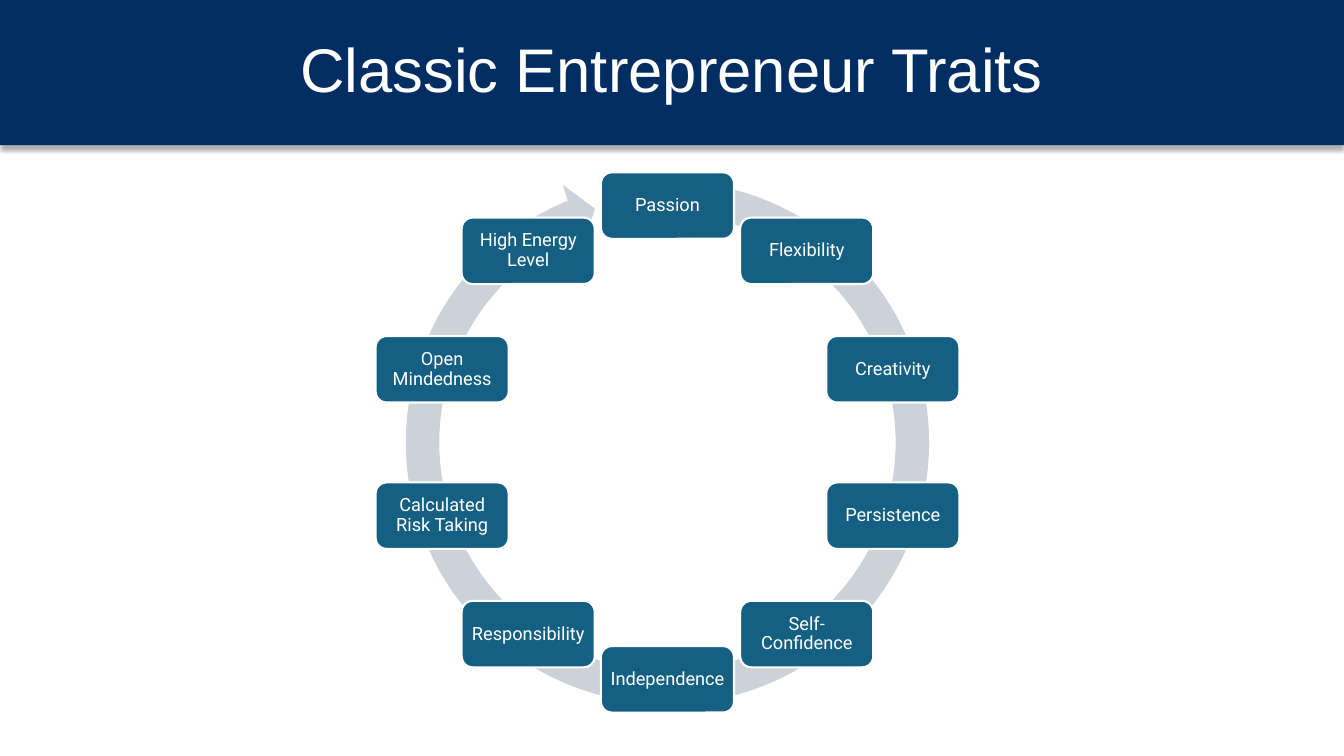
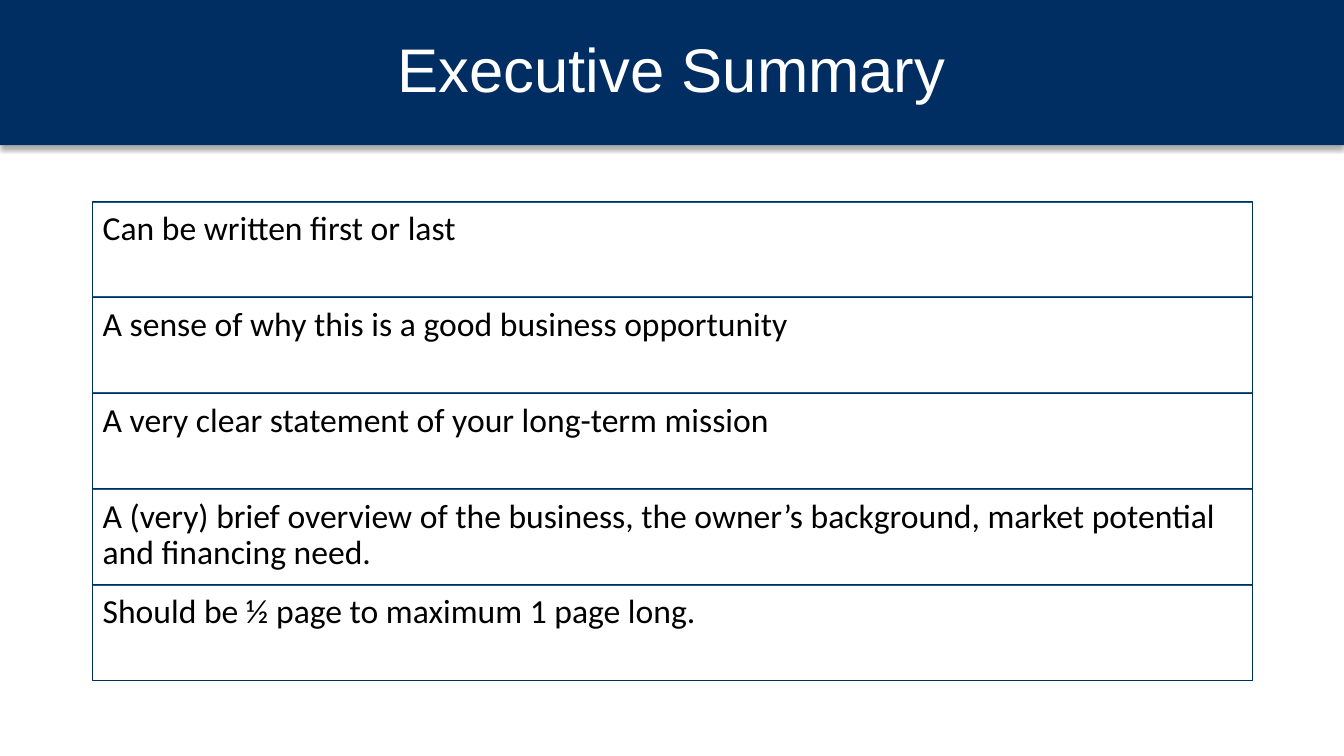
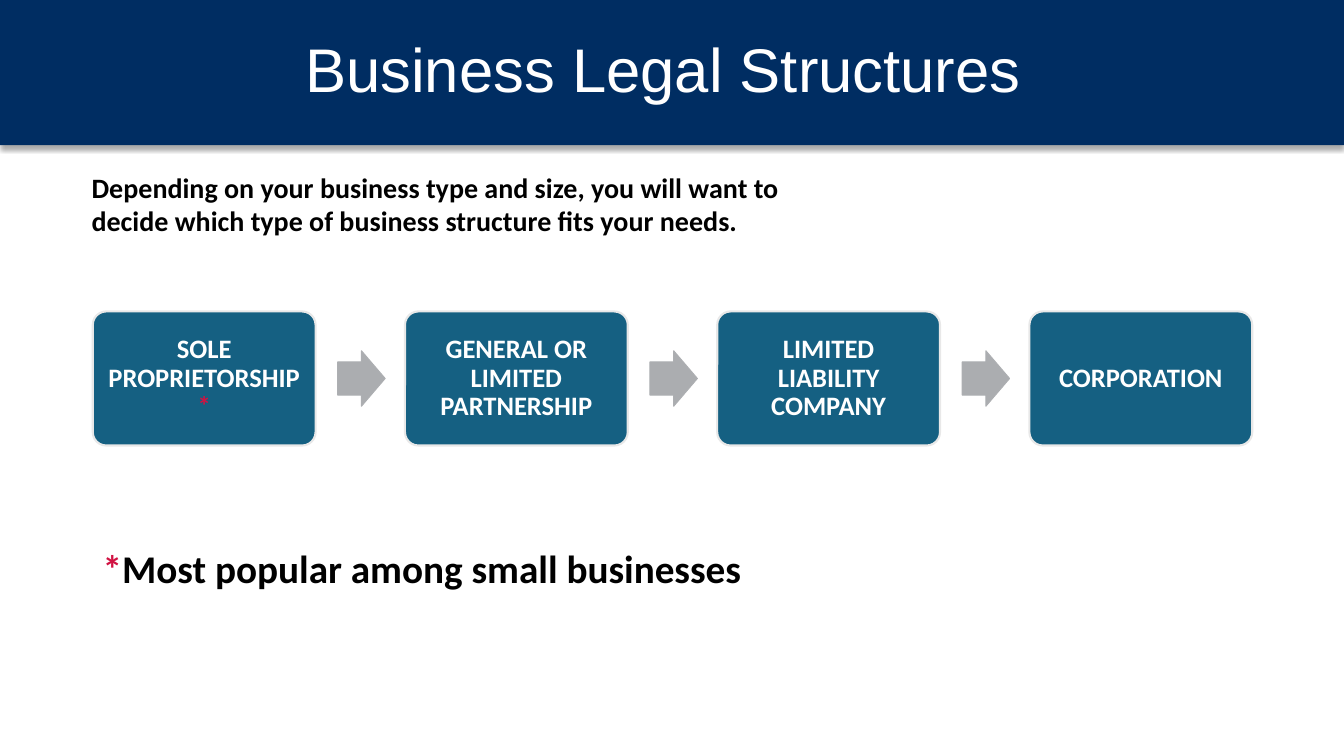
from math import cos, radians, sin

from lxml import etree
from pptx import Presentation
from pptx.dml.color import RGBColor
from pptx.enum.shapes import MSO_CONNECTOR, MSO_SHAPE as Preset
from pptx.enum.text import MSO_ANCHOR as Anchor, PP_ALIGN as Align
from pptx.oxml import parse_xml
from pptx.oxml.ns import nsdecls, qn
from pptx.util import Inches, Pt

NAVY = RGBColor(0x00, 0x2D, 0x62)
TEAL = RGBColor(0x15, 0x60, 0x82)
RING_GRAY = RGBColor(0xCC, 0xD2, 0xD8)
ARROW_GRAY = RGBColor(0xAB, 0xAD, 0xB0)
ARROW_EDGE = RGBColor(0xAD, 0xAF, 0xB2)
PALE_GRAY = RGBColor(0xE8, 0xE8, 0xE8)
RED = RGBColor(0xD1, 0x12, 0x42)
WHITE = RGBColor(0xFF, 0xFF, 0xFF)
BLACK = RGBColor(0x00, 0x00, 0x00)

SLIDE_WIDTH, SLIDE_HEIGHT = 13.33, 7.5
BAND_HEIGHT = 1.44
MARGIN = 0.92
CONTENT_WIDTH = 11.5

BAND_SHADOW = (
    f'<a:outerShdw {nsdecls("a")} blurRad="{Pt(3.5)}" dist="{Pt(2.2)}" dir="5400000"'
    ' algn="t" rotWithShape="0"><a:srgbClr val="000000"><a:alpha val="32000"/>'
    "</a:srgbClr></a:outerShdw>"
)


def add_box(slide, preset, left, top, width, height, fill=None, edge=None, edge_width=1.5):
    """Add a preset shape, in inches, without shadow; no fill or edge means none drawn."""
    box = slide.shapes.add_shape(
        preset, Inches(left), Inches(top), Inches(width), Inches(height))
    box.shadow.inherit = False
    if fill is None:
        box.fill.background()
    else:
        box.fill.solid()
        box.fill.fore_color.rgb = fill
    if edge is None:
        box.line.fill.background()
    else:
        box.line.color.rgb = edge
        box.line.width = Pt(edge_width)
    return box


def write(box, spans, font, size, color, bold=False, align=Align.CENTER,
          anchor=Anchor.MIDDLE, inset=(0.1, 0.05), spacing=0.9):
    """Fill a box with one paragraph of (text, color) spans; a None color keeps the default."""
    frame = box.text_frame
    frame.word_wrap = True
    frame.vertical_anchor = anchor
    frame.margin_left = frame.margin_right = Inches(inset[0])
    frame.margin_top = frame.margin_bottom = Inches(inset[1])
    para = frame.paragraphs[0]
    para.alignment = align
    para.line_spacing = spacing
    para.font.name = font
    para.font.size = Pt(size)
    para.font.bold = bold
    para.font.color.rgb = color
    for text, span_color in spans:
        span = para.add_run()
        span.text = text
        if span_color is not None:
            span.font.color.rgb = span_color


deck = Presentation()
deck.slide_width = Inches(SLIDE_WIDTH)
deck.slide_height = Inches(SLIDE_HEIGHT)

pages = []
for title in ("Classic Entrepreneur Traits", "Executive Summary", "Business Legal Structures "):
    page = deck.slides.add_slide(deck.slide_layouts[6])
    band = add_box(page, Preset.RECTANGLE, 0, 0, SLIDE_WIDTH, BAND_HEIGHT, NAVY)
    band.element.spPr.find(qn("a:effectLst")).append(parse_xml(BAND_SHADOW))
    write(band, [(title, None)], "Arial", 44, WHITE)
    pages.append(page)
traits_page, summary_page, structures_page = pages

# Traits: ten boxes evenly spaced clockwise around a circular arrow
CENTER_X, CENTER_Y, RADIUS = 6.62, 4.39, 2.35
RING_SIZE = 5.52
TRAIT_WIDTH, TRAIT_HEIGHT = 1.32, 0.66
TRAITS = (
    "Passion", "Flexibility", "Creativity", "Persistence", "Self-Confidence",
    "Independence", "Responsibility", "Calculated Risk Taking", "Open Mindedness",
    "High Energy Level",
)
ring = add_box(traits_page, Preset.CIRCULAR_ARROW, CENTER_X - RING_SIZE / 2,
               CENTER_Y - RING_SIZE / 2, RING_SIZE, RING_SIZE, RING_GRAY)
for index, value in enumerate((0.06, 3.31, 148.35, 167.7, 0.06)):
    ring.adjustments[index] = value
for index, trait in enumerate(TRAITS):
    angle = radians(index * 360 / len(TRAITS))
    box = add_box(traits_page, Preset.ROUNDED_RECTANGLE,
                  CENTER_X + RADIUS * sin(angle) - TRAIT_WIDTH / 2,
                  CENTER_Y - RADIUS * cos(angle) - TRAIT_HEIGHT / 2,
                  TRAIT_WIDTH, TRAIT_HEIGHT, TEAL, WHITE)
    write(box, [(trait, None)], "Roboto", 13, WHITE, inset=(0.05, 0.05))

# Summary: five equal rows, each under a rule
ROWS_TOP, ROW_HEIGHT = 2, 0.95
POINTS = (
    "Can be written first or last",
    "A sense of why this is a good business opportunity",
    "A very clear statement of your long-term mission",
    "A (very) brief overview of the business, the owner’s background, "
    "market potential and financing need.",
    "Should be ½ page to maximum 1 page long.",
)
for index, point in enumerate(POINTS):
    top = ROWS_TOP + index * ROW_HEIGHT
    rule = summary_page.shapes.add_connector(
        MSO_CONNECTOR.STRAIGHT, Inches(MARGIN), Inches(top),
        Inches(MARGIN + CONTENT_WIDTH), Inches(top))
    rule.line.color.rgb = TEAL
    rule.line.width = Pt(1.5)
    etree.SubElement(rule.element.spPr, qn("a:effectLst"))
    row = add_box(summary_page, Preset.RECTANGLE, MARGIN, top, CONTENT_WIDTH, ROW_HEIGHT,
                  edge=NAVY, edge_width=0.75)
    write(row, [(point, None)], "Calibri", 24, BLACK, align=Align.LEFT,
          anchor=Anchor.TOP, inset=(0.1, 0.1))

# Structures: four boxes across the content width, an arrow in each gap
intro = structures_page.shapes.add_textbox(Inches(0.81), Inches(1.64), Inches(7.81), Inches(0.77))
write(intro, [("Depending on your business type and size, you will want to decide which "
               "type of business structure fits your needs.", None)],
      "Calibri", 20, BLACK, bold=True, align=Align.LEFT, anchor=Anchor.TOP, spacing=1.0)

STEP_TOP, STEP_WIDTH, STEP_HEIGHT = 3.09, 2.21, 1.33
ARROW_OFFSET, ARROW_WIDTH, ARROW_HEIGHT = 0.22, 0.47, 0.55
STRUCTURES = (
    [("SOLE PROPRIETORSHIP", None), ("*", RED)],
    [("GENERAL OR LIMITED PARTNERSHIP", None)],
    [("LIMITED LIABILITY COMPANY", None)],
    [("CORPORATION", None)],
)
pitch = (CONTENT_WIDTH - STEP_WIDTH) / (len(STRUCTURES) - 1)
for index, spans in enumerate(STRUCTURES):
    left = MARGIN + index * pitch
    box = add_box(structures_page, Preset.ROUNDED_RECTANGLE, left, STEP_TOP,
                  STEP_WIDTH, STEP_HEIGHT, TEAL, PALE_GRAY)
    box.adjustments[0] = 0.1
    write(box, spans, "Calibri", 19, WHITE, bold=True, inset=(0.08, 0.08))
    if index < len(STRUCTURES) - 1:
        arrow = add_box(structures_page, Preset.RIGHT_ARROW, left + STEP_WIDTH + ARROW_OFFSET,
                        STEP_TOP + (STEP_HEIGHT - ARROW_HEIGHT) / 2,
                        ARROW_WIDTH, ARROW_HEIGHT, ARROW_GRAY, ARROW_EDGE, 0.75)
        arrow.adjustments[0] = 0.6

footnote = structures_page.shapes.add_textbox(
    Inches(MARGIN), Inches(5.4), Inches(CONTENT_WIDTH), Inches(0.55))
write(footnote, [("*", RED), ("Most popular among small businesses", None)],
      "Calibri", 28, BLACK, bold=True, align=Align.LEFT, anchor=Anchor.TOP)

deck.save("out.pptx")
